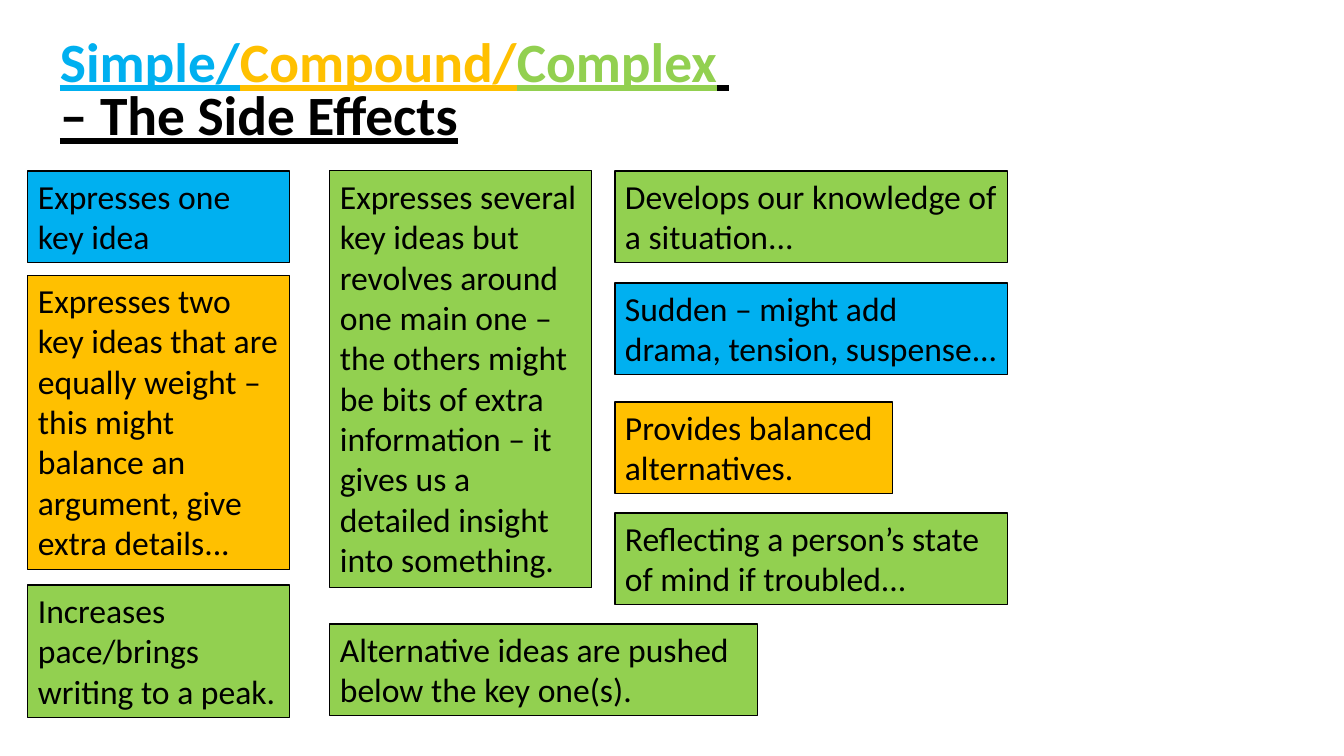
from pptx import Presentation
from pptx.dml.color import RGBColor
from pptx.enum.shapes import MSO_SHAPE
from pptx.enum.text import MSO_ANCHOR, MSO_AUTO_SIZE, PP_ALIGN
from pptx.util import Emu, Pt

RECTANGLE = MSO_SHAPE.RECTANGLE
MIDDLE, TOP = MSO_ANCHOR.MIDDLE, MSO_ANCHOR.TOP
GROW = MSO_AUTO_SIZE.SHAPE_TO_FIT_TEXT
LEFT = PP_ALIGN.LEFT

COLORS = {
    "simple": "00B0F0",
    "compound": "FFC000",
    "complex": "92D050",
    "ink": "000000",
}
FONT = "Calibri"

TITLE_AREA = (50, 30, 907, 126)
TITLE_LINES = [
    [("Simple/", "simple"), ("Compound/", "compound"), ("Complex", "complex"), (" ", "ink")],
    [("– The Side Effects", "ink")],
]

# Column left edge -> cards: top, width, number of text lines, sentence type, text
COLUMNS = {
    28: [
        (171, 262, 2, "simple", "Expresses one key idea"),
        (275, 262, 7, "compound", "Expresses two key ideas that are equally weight – "
                                  "this might balance an argument, give extra details..."),
        (585, 262, 3, "complex", "Increases pace/brings writing to a peak."),
    ],
    330: [
        (171, 262, 10, "complex", "Expresses several key ideas but revolves around one main one – "
                                  "the others might be bits of extra information – "
                                  "it gives us a detailed insight into something."),
        (624, 428, 2, "complex", "Alternative ideas are pushed below the key one(s)."),
    ],
    615: [
        (171, 393, 2, "complex", "Develops our knowledge of a situation..."),
        (283, 393, 2, "simple", "Sudden – might add drama, tension, suspense..."),
        (402, 278, 2, "compound", "Provides balanced alternatives."),
        (513, 393, 2, "complex", "Reflecting a person’s state of mind if troubled..."),
    ],
}
CARD_PADDING = 10
LINE_HEIGHT = 40.7


def px(length):
    return Emu(round(length * 914400 / 100.8))


def color(name):
    return RGBColor.from_string(COLORS[name])


def style(span, size, color_name):
    span.font.name = FONT
    span.font.size = Pt(size)
    span.font.color.rgb = color(color_name)


def add_title(page):
    box = page.shapes.add_textbox(*map(px, TITLE_AREA))
    frame = box.text_frame
    frame.word_wrap = True
    frame.vertical_anchor = MIDDLE
    para = frame.paragraphs[0]
    para.line_spacing = 0.8
    for number, line in enumerate(TITLE_LINES):
        if number:
            para.add_line_break()
        for text, color_name in line:
            span = para.add_run()
            span.text = text
            style(span, 39.6, color_name)
            span.font.bold = True
            span.font.underline = True


def add_card(page, left, top, width, lines, kind, text):
    height = CARD_PADDING + LINE_HEIGHT * lines
    card = page.shapes.add_shape(RECTANGLE, px(left), px(top), px(width), px(height))
    card.shadow.inherit = False
    card.fill.solid()
    card.fill.fore_color.rgb = color(kind)
    card.line.color.rgb = color("ink")
    card.line.width = Pt(0.75)
    frame = card.text_frame
    frame.word_wrap = True
    frame.auto_size = GROW
    frame.vertical_anchor = TOP
    frame.text = text
    para = frame.paragraphs[0]
    para.alignment = LEFT
    style(para.runs[0], 24, "ink")


def main():
    deck = Presentation()
    deck.slide_width, deck.slide_height = px(1344), px(756)
    page = deck.slides.add_slide(deck.slide_layouts[6])
    add_title(page)
    for left, cards in COLUMNS.items():
        for card in cards:
            add_card(page, left, *card)
    deck.save("out.pptx")


if __name__ == "__main__":
    main()
